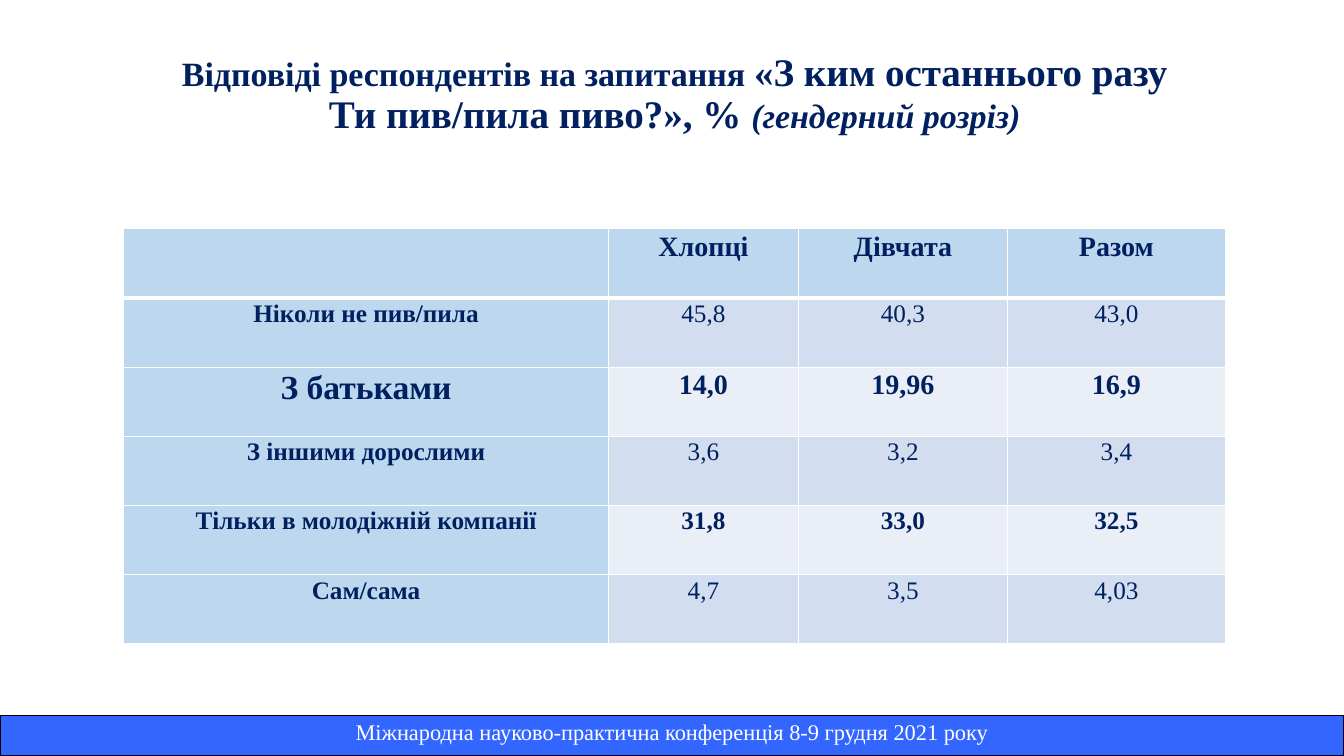
"""Builds a slide with a gender breakdown of survey answers and a conference footer."""
from dataclasses import dataclass

from lxml.etree import SubElement
from pptx import Presentation
from pptx.dml.color import RGBColor as Rgb
from pptx.enum.text import MSO_ANCHOR as Anchor, MSO_AUTO_SIZE as AutoSize, PP_ALIGN as Align
from pptx.oxml.ns import qn
from pptx.util import Pt


@dataclass(frozen=True)
class Theme:
    font: str = "Times New Roman"
    navy: str = "002060"
    white: str = "FFFFFF"
    black: str = "000000"
    header: str = "BDD7EE"
    odd_band: str = "D2DEEF"
    even_band: str = "EAEFF7"
    footer: str = "3366FF"
    title_size: float = 24.3
    question_size: float = 27.9
    accent_size: float = 24
    large_size: float = 20
    body_size: float = 18
    footer_size: float = 16


class SlideBuilder:
    def __init__(self, theme, deck):
        self.theme = theme
        self.slide = deck.slides.add_slide(deck.slide_layouts[5])

    def run(self, paragraph, text, size, color, bold=False, italic=False):
        run = paragraph.add_run()
        run.text = text
        font = run.font
        font.name, font.size, font.bold, font.italic = self.theme.font, Pt(size), bold, italic
        font.color.rgb = Rgb.from_string(color)

    def title(self, left, top, width, height, parts):
        heading = self.slide.shapes.title
        heading.left, heading.top, heading.width, heading.height = map(Pt, (left, top, width, height))
        frame = heading.text_frame
        frame.word_wrap, frame.auto_size = True, AutoSize.NONE
        frame.vertical_anchor = Anchor.MIDDLE
        frame.margin_top, frame.margin_bottom = 0, Pt(28)
        line = frame.paragraphs[0]
        line.alignment, line.line_spacing = Align.CENTER, 0.9
        for text, size, italic in parts:
            self.run(line, text, size, self.theme.navy, True, italic)

    def table(self, left, top, widths, row_height, row_count):
        area = map(Pt, (left, top, sum(widths), row_height * row_count))
        grid = self.slide.shapes.add_table(row_count, len(widths), *area).table
        for column, width in zip(grid.columns, widths):
            column.width = Pt(width)
        for row in grid.rows:
            row.height = Pt(row_height)
        return grid

    def cell(self, cell, text, size, color, fill, border, bold=False, spacing=None, top=1, bottom=1):
        cell.fill.solid()
        cell.fill.fore_color.rgb = Rgb.from_string(fill)
        self.borders(cell, border, top, bottom)
        if spacing:
            cell.margin_left = cell.margin_right = Pt(5)
            cell.margin_top = cell.margin_bottom = 0
        if text:
            line = cell.text_frame.paragraphs[0]
            line.alignment, line.line_spacing = Align.CENTER, spacing
            self.run(line, text, size, color, bold)

    def borders(self, cell, color, top, bottom):
        properties = cell._tc.get_or_add_tcPr()
        sides = (("a:lnL", 1), ("a:lnR", 1), ("a:lnT", top), ("a:lnB", bottom))
        for position, (side, width) in enumerate(sides):
            edge = SubElement(properties, qn(side), w=str(Pt(width)))
            SubElement(SubElement(edge, qn("a:solidFill")), qn("a:srgbClr"), val=color)
            properties.insert(position, edge)


def main():
    theme = Theme()
    deck = Presentation()
    deck.slide_width, deck.slide_height = Pt(960), Pt(540)
    builder = SlideBuilder(theme, deck)

    builder.title(113, 43.2, 738, 77, (
        ("Відповіді респондентів на запитання ", theme.title_size, False),
        ("«З ким останнього разу Ти пив/пила пиво?», % ", theme.question_size, False),
        ("(гендерний розріз)", theme.title_size, True),
    ))

    body, large, accent = theme.body_size, theme.large_size, theme.accent_size
    answers = (
        (("", "Хлопці", "Дівчата", "Разом"), large, large, True),
        (("Ніколи не пив/пила", "45,8", "40,3", "43,0"), body, body, False),
        (("З батьками", "14,0", "19,96", "16,9"), accent, large, True),
        (("З іншими дорослими", "3,6", "3,2", "3,4"), body, body, False),
        (("Тільки в молодіжній компанії", "31,8", "33,0", "32,5"), body, body, True),
        (("Сам/сама", "4,7", "3,5", "4,03"), body, body, False),
    )
    survey = builder.table(88.5, 163.5, (346, 136, 149, 156), 49.4, len(answers))
    for row, (texts, label_size, value_size, bold_values) in enumerate(answers):
        band = theme.odd_band if row % 2 else theme.even_band
        for column, text in enumerate(texts):
            is_label = column == 0
            builder.cell(
                survey.cell(row, column), text,
                label_size if is_label else value_size,
                theme.navy,
                theme.header if is_label or row == 0 else band,
                theme.white,
                bold=is_label or bold_values,
                spacing=1.07,
                top=3 if row == 1 else 1,
                bottom=3 if row == 0 else 1,
            )

    footer = builder.table(0, 511.2, (960,), 28.8, 1)
    builder.cell(footer.cell(0, 0), "Міжнародна науково-практична конференція 8-9 грудня 2021 року",
                 theme.footer_size, theme.white, theme.footer, theme.black)

    deck.save("out.pptx")


if __name__ == "__main__":
    main()
